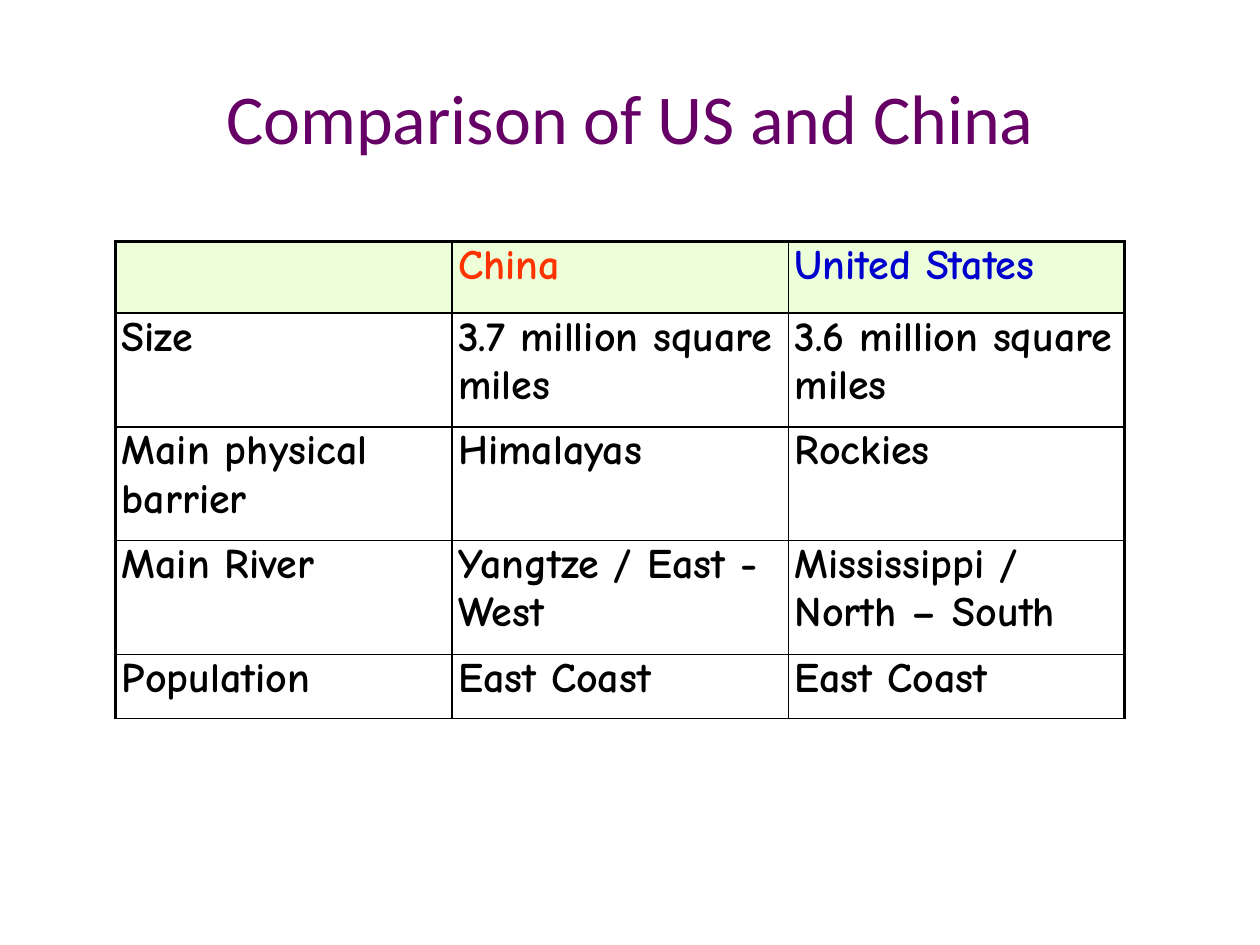
import dataclasses

import lxml.etree
import pptx
import pptx.dml.color
import pptx.enum.text
import pptx.oxml.ns
import pptx.util

Pt = pptx.util.Pt


@dataclasses.dataclass(frozen=True)
class Theme:
    title_font: str = "Calibri"
    table_font: str = "Comic Neue"
    title_size: float = 40
    table_size: float = 24
    title_color: str = "660066"
    text_color: str = "000000"
    china_color: str = "FF3300"
    states_color: str = "0000CC"
    header_fill: str = "ECFFD9"
    border_color: str = "000000"
    thin_border: float = 1
    thick_border: float = 2.25


class SlideBuilder:
    def __init__(self, slide, theme):
        self.slide = slide
        self.theme = theme

    def style_font(self, font, name, size, color, bold=False):
        font.name = name
        font.size = Pt(size)
        font.bold = bold
        font.color.rgb = pptx.dml.color.RGBColor.from_string(color)

    def add_title(self, text, left, top, width, height):
        theme = self.theme
        shape = self.slide.shapes.add_textbox(Pt(left), Pt(top), Pt(width), Pt(height))
        frame = shape.text_frame
        frame.word_wrap = True
        frame.vertical_anchor = pptx.enum.text.MSO_ANCHOR.MIDDLE
        paragraph = frame.paragraphs[0]
        paragraph.text = text
        paragraph.alignment = pptx.enum.text.PP_ALIGN.CENTER
        self.style_font(paragraph.font, theme.title_font, theme.title_size, theme.title_color)

    def add_border(self, cell, side, width):
        qn = pptx.oxml.ns.qn
        properties = cell._tc.get_or_add_tcPr()
        line = lxml.etree.SubElement(properties, qn(f"a:ln{side}"), w=str(Pt(width)))
        fill = lxml.etree.SubElement(line, qn("a:solidFill"))
        lxml.etree.SubElement(fill, qn("a:srgbClr"), val=self.theme.border_color)

    def style_cell(self, cell, text, color, borders, fill_color):
        cell.margin_left = cell.margin_right = Pt(3.6)
        cell.margin_top = cell.margin_bottom = Pt(0)
        for side, width in borders.items():
            self.add_border(cell, side, width)
        if fill_color:
            cell.fill.solid()
            cell.fill.fore_color.rgb = pptx.dml.color.RGBColor.from_string(fill_color)
        else:
            cell.fill.background()
        paragraph = cell.text_frame.paragraphs[0]
        paragraph.text = text
        self.style_font(paragraph.font, self.theme.table_font, self.theme.table_size, color, bold=True)

    def add_table(self, rows, header_colors, left, top, column_width, row_heights):
        theme = self.theme
        last_column = len(rows[0]) - 1
        table = self.slide.shapes.add_table(
            len(rows), len(rows[0]), Pt(left), Pt(top),
            Pt(column_width * len(rows[0])), Pt(sum(row_heights)),
        ).table
        table.first_row = False
        table.horz_banding = False
        for column in table.columns:
            column.width = Pt(column_width)
        for row_index, (texts, height) in enumerate(zip(rows, row_heights)):
            table.rows[row_index].height = Pt(height)
            is_header = row_index == 0
            for column_index, text in enumerate(texts):
                borders = {
                    "L": theme.thick_border if column_index == 0 else theme.thin_border,
                    "R": theme.thick_border if column_index == last_column else theme.thin_border,
                    "T": theme.thick_border if is_header else theme.thin_border,
                    "B": theme.thin_border,
                }
                color = header_colors[column_index] if is_header else theme.text_color
                fill_color = theme.header_fill if is_header else None
                self.style_cell(table.cell(row_index, column_index), text, color, borders, fill_color)


def main():
    theme = Theme()
    presentation = pptx.Presentation()
    presentation.slide_width = Pt(720)
    presentation.slide_height = Pt(540)
    builder = SlideBuilder(presentation.slides.add_slide(presentation.slide_layouts[6]), theme)

    comparison = [
        ("", "China", "United States"),
        ("Size", "3.7 million square miles", "3.6 million square miles"),
        ("Main physical barrier", "Himalayas", "Rockies"),
        ("Main River", "Yangtze / East - West", "Mississippi / North – South"),
        ("Population", "East Coast", "East Coast"),
    ]
    builder.add_table(
        comparison,
        header_colors=(theme.text_color, theme.china_color, theme.states_color),
        left=66, top=138, column_width=192.25, row_heights=(41, 65, 65, 65, 36.5),
    )
    builder.add_title("Comparison of US and China", left=36, top=21.6, width=648, height=90)
    presentation.save("out.pptx")


if __name__ == "__main__":
    main()
